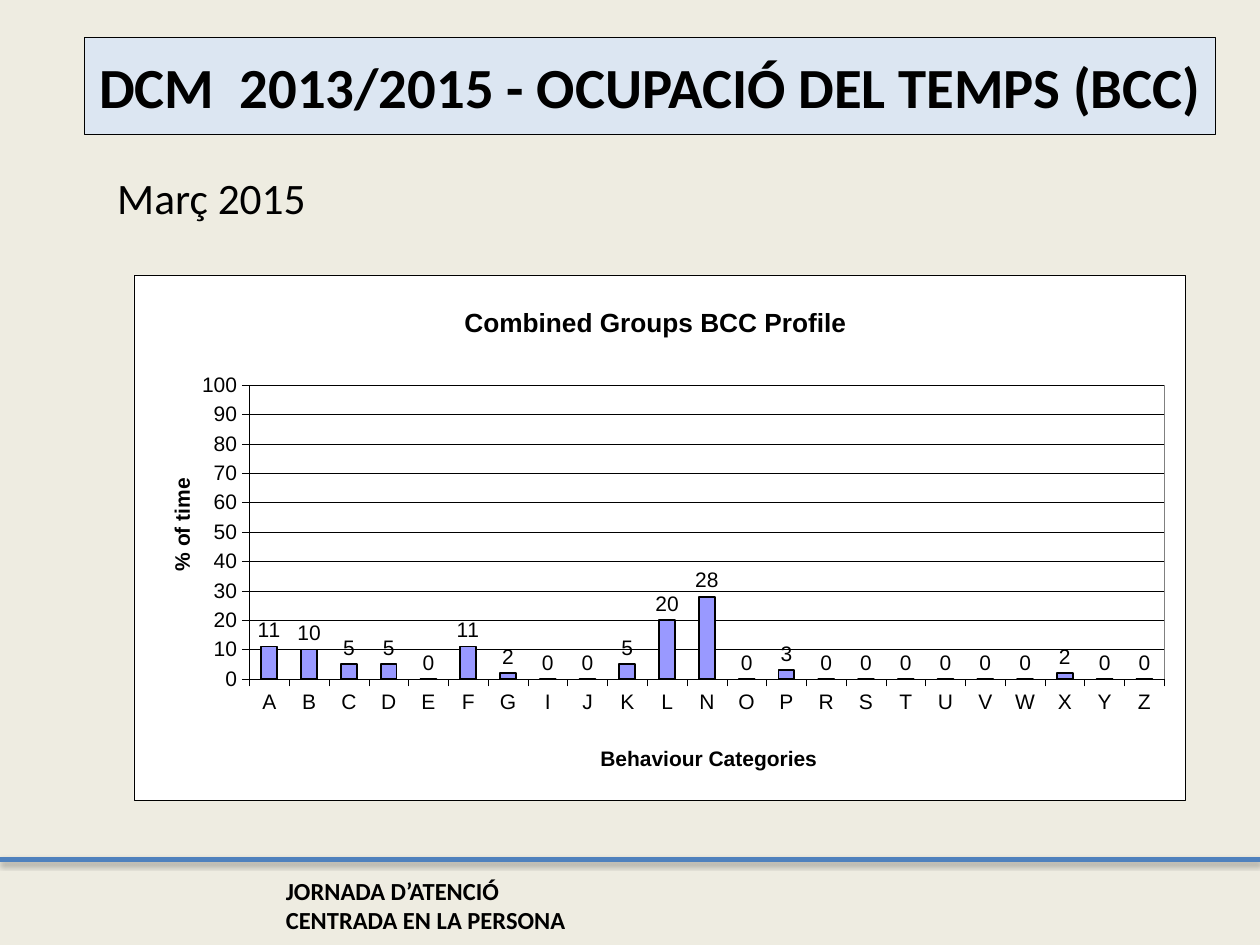
from dataclasses import dataclass

import pptx
import pptx.chart.data
import pptx.dml.color
import pptx.enum.chart
import pptx.enum.shapes
import pptx.enum.text
import pptx.oxml
import pptx.oxml.ns
import pptx.util
from pptx.util import Inches, Pt


@dataclass(frozen=True)
class Theme:
    background: str = "EEECE1"
    title_fill: str = "DCE6F2"
    rule: str = "4F81BD"
    bar: str = "9999FF"
    text: str = "000000"
    paper: str = "FFFFFF"
    plot_border: str = "808080"
    text_font: str = "Calibri"
    chart_font: str = "Arial"
    title_size: float = 32.4
    body_size: float = 24.8
    footer_size: float = 14
    chart_title_size: float = 15
    chart_size: float = 12
    hairline: float = 0.25


THEME = Theme()

BEHAVIOUR_SHARES = dict(zip(
    "ABCDEFGIJKLNOPRSTUVWXYZ",
    [11, 10, 5, 5, 0, 11, 2, 0, 0, 5, 20, 28, 0, 3, 0, 0, 0, 0, 0, 0, 2, 0, 0],
))


def rgb(color):
    return pptx.dml.color.RGBColor.from_string(color)


def fill_solid(fill, color):
    fill.solid()
    fill.fore_color.rgb = rgb(color)


def set_line(line, color, width):
    fill_solid(line.fill, color)
    line.width = Pt(width)


def set_font(font, size, name=THEME.chart_font, bold=False):
    font.name, font.size, font.bold = name, Pt(size), bold
    font.color.rgb = rgb(THEME.text)


def set_text(frame, text, size, name=THEME.text_font, bold=False, align=None):
    frame.text = text
    paragraph = frame.paragraphs[0]
    paragraph.alignment = align
    set_font(paragraph.runs[0].font, size, name, bold)
    return paragraph


def place(shape, left, top, width, height):
    shape.left, shape.top = Inches(left), Inches(top)
    shape.width, shape.height = Inches(width), Inches(height)


def parse_xml(tag, content):
    """Parse one element whose children use the c: and a: prefixes."""
    namespaces = pptx.oxml.ns.nsdecls("c", "a")
    return pptx.oxml.parse_xml(f"<{tag} {namespaces}>{content}</{tag}>")


def add_title(slide, text):
    title = slide.shapes.title
    place(title, 0.67, 0.3, 8.98, 0.77)
    fill_solid(title.fill, THEME.title_fill)
    set_line(title.line, THEME.text, 0.75)
    frame = title.text_frame
    frame.auto_size = pptx.enum.text.MSO_AUTO_SIZE.NONE
    frame.word_wrap = False
    frame.vertical_anchor = pptx.enum.text.MSO_ANCHOR.MIDDLE
    set_text(frame, text, THEME.title_size, bold=True,
             align=pptx.enum.text.PP_ALIGN.CENTER)


def add_date(slide, text):
    body = slide.placeholders[1]
    place(body, 0.83, 1.31, 1.73, 0.47)
    frame = body.text_frame
    frame.auto_size = pptx.enum.text.MSO_AUTO_SIZE.NONE
    frame.word_wrap = False
    paragraph = set_text(frame, text, THEME.body_size)
    paragraph.space_before = Pt(0)
    properties = paragraph._p.get_or_add_pPr()
    properties.set("marL", "0")
    properties.set("indent", "0")
    properties.append(parse_xml("a:buNone", ""))


def add_footer(slide, text):
    rule = slide.shapes.add_connector(
        pptx.enum.shapes.MSO_CONNECTOR.STRAIGHT,
        Inches(0), Inches(6.82), Inches(10), Inches(6.82))
    set_line(rule.line, THEME.rule, 3)
    rule._element.spPr.append(parse_xml(
        "a:effectLst",
        f'<a:outerShdw blurRad="{Pt(3.1)}" dist="{Pt(1.8)}" dir="5400000" rotWithShape="0">'
        f'<a:srgbClr val="{THEME.text}"><a:alpha val="35000"/></a:srgbClr></a:outerShdw>'))
    box = slide.shapes.add_textbox(
        Inches(2.17), Inches(6.9), Inches(2.68), Inches(0.57))
    box.text_frame.word_wrap = True
    set_text(box.text_frame, text, THEME.footer_size, bold=True)


def set_layout(element, index, left, top, size=None):
    """Fix a chart part's place, in fractions of the chart; size is for the plot."""
    old_layout = element.find(pptx.oxml.ns.qn("c:layout"))
    if old_layout is not None:
        element.remove(old_layout)
    values = {"xMode": "edge", "yMode": "edge", "x": left, "y": top}
    if size:
        values = {"layoutTarget": "inner", **values, "w": size[0], "h": size[1]}
    content = "".join(f'<c:{key} val="{value}"/>' for key, value in values.items())
    element.insert(index, parse_xml(
        "c:layout", f"<c:manualLayout>{content}</c:manualLayout>"))


def set_chart_title(title, text, size, left, top):
    set_text(title.text_frame, text, size, name=THEME.chart_font, bold=True)
    set_layout(title.element, 1, left, top)


def area_style(border):
    return parse_xml(
        "c:spPr",
        f'<a:solidFill><a:srgbClr val="{THEME.paper}"/></a:solidFill>'
        f'<a:ln w="{Pt(THEME.hairline)}"><a:solidFill><a:srgbClr val="{border}"/>'
        "</a:solidFill></a:ln>")


def style_axis(axis, text, left, top):
    set_chart_title(axis.axis_title, text, THEME.chart_size, left, top)
    set_font(axis.tick_labels.font, THEME.chart_size)
    set_line(axis.format.line, THEME.text, THEME.hairline)
    axis.major_tick_mark = pptx.enum.chart.XL_TICK_MARK.OUTSIDE


def style_bars(plot):
    plot.gap_width = 150
    plot.vary_by_categories = False
    series = plot.series[0]
    fill_solid(series.format.fill, THEME.bar)
    set_line(series.format.line, THEME.text, 1)
    labels = series.data_labels
    labels.show_value = True
    labels.number_format = "0"
    labels.number_format_is_linked = False
    labels.position = pptx.enum.chart.XL_LABEL_POSITION.OUTSIDE_END
    set_font(labels.font, THEME.chart_size)


def add_profile_chart(slide, shares):
    data = pptx.chart.data.CategoryChartData(number_format="0")
    data.categories = list(shares)
    data.add_series("Series 1", list(shares.values()))
    chart = slide.shapes.add_chart(
        pptx.enum.chart.XL_CHART_TYPE.COLUMN_CLUSTERED,
        Inches(1.06), Inches(2.18), Inches(8.35), Inches(4.17), data).chart
    chart.has_legend = False
    set_font(chart.font, THEME.chart_size)
    set_chart_title(chart.chart_title, "Combined Groups BCC Profile",
                    THEME.chart_title_size, 0.31, 0.05)
    style_axis(chart.category_axis, "Behaviour Categories", 0.44, 0.89)
    value_axis = chart.value_axis
    style_axis(value_axis, "% of time", 0.03, 0.38)
    value_axis.minimum_scale, value_axis.maximum_scale = 0, 100
    value_axis.major_unit = 10
    value_axis.tick_labels.number_format = "0"
    value_axis.tick_labels.number_format_is_linked = False
    set_line(value_axis.major_gridlines.format.line, THEME.text, THEME.hairline)
    style_bars(chart.plots[0])

    chart_element = chart.element.find(pptx.oxml.ns.qn("c:chart"))
    plot_area = chart_element.find(pptx.oxml.ns.qn("c:plotArea"))
    set_layout(plot_area, 0, 0.11, 0.21, size=(0.87, 0.56))
    plot_area.append(area_style(THEME.plot_border))
    chart_element.addnext(area_style(THEME.text))


def main():
    presentation = pptx.Presentation()
    presentation.slide_width, presentation.slide_height = Inches(10), Inches(7.5)
    slide = presentation.slides.add_slide(presentation.slide_layouts[1])
    fill_solid(slide.background.fill, THEME.background)
    add_footer(slide, "JORNADA D’ATENCIÓ CENTRADA EN LA PERSONA")
    add_title(slide, "DCM  2013/2015 - OCUPACIÓ DEL TEMPS (BCC)")
    add_date(slide, "Març 2015")
    add_profile_chart(slide, BEHAVIOUR_SHARES)
    presentation.save("out.pptx")


if __name__ == "__main__":
    main()
